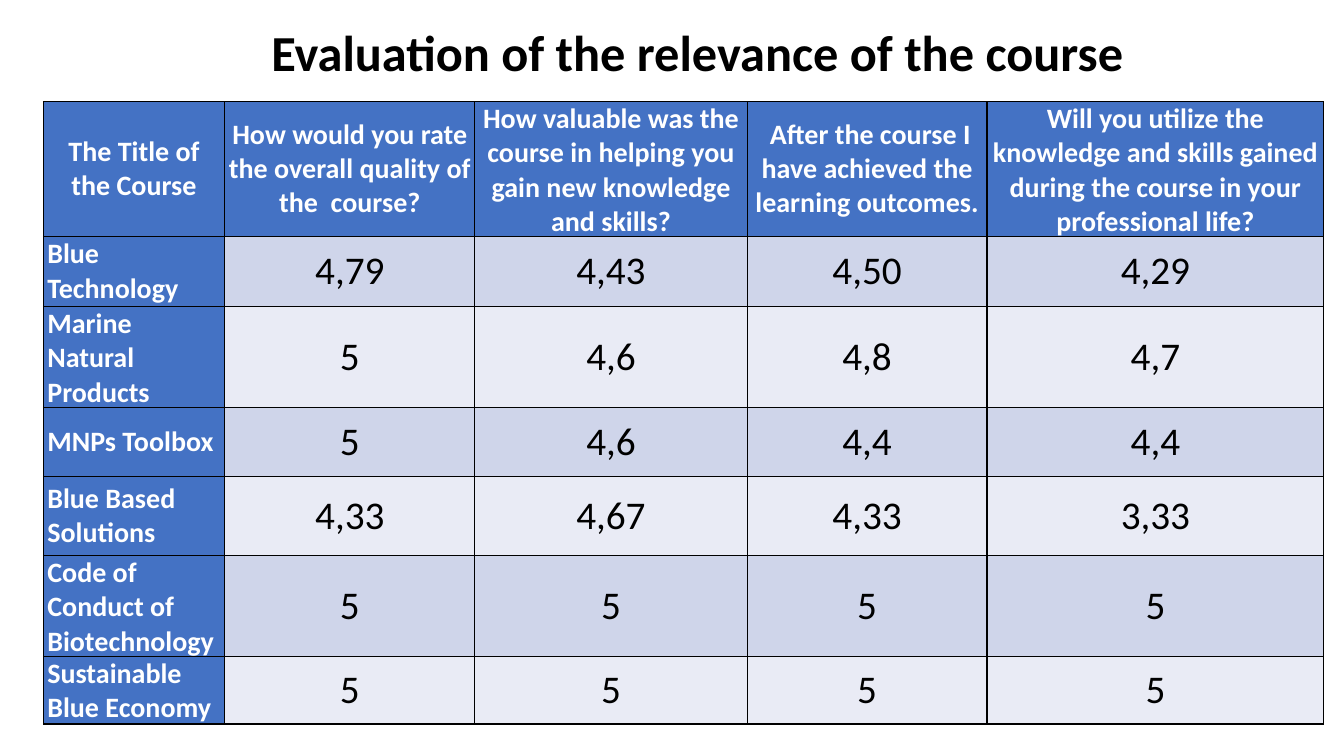
import pptx
import pptx.dml.color
import pptx.enum.text
import pptx.oxml
import pptx.oxml.ns
import pptx.util

Inches = pptx.util.Inches
Pt = pptx.util.Pt
RGBColor = pptx.dml.color.RGBColor
PP_ALIGN = pptx.enum.text.PP_ALIGN
MSO_ANCHOR = pptx.enum.text.MSO_ANCHOR

BLACK = RGBColor(0x00, 0x00, 0x00)
WHITE = RGBColor(0xFF, 0xFF, 0xFF)
BLUE = RGBColor(0x44, 0x72, 0xC4)
DARK_BAND = RGBColor(0xCF, 0xD5, 0xEA)
LIGHT_BAND = RGBColor(0xE9, 0xEB, 0xF5)

COLUMN_WIDTHS = [1.8, 2.48, 2.7, 2.38, 3.34]
ROW_HEIGHTS = [0.89, 0.7, 0.69, 0.68, 0.79, 0.91, 0.65]
RATINGS = [
    ["The Title of the Course",
     "How would you rate the overall quality of the  course?",
     "How valuable was the course in helping you gain new knowledge and skills?",
     " After the course I have achieved the learning outcomes.",
     "Will you utilize the knowledge and skills gained during the course in your professional life?"],
    ["Blue Technology", "4,79", "4,43", "4,50", "4,29"],
    ["Marine Natural Products", "5", "4,6", "4,8", "4,7"],
    ["MNPs Toolbox", "5", "4,6", "4,4", "4,4"],
    ["Blue Based Solutions", "4,33", "4,67", "4,33", "3,33"],
    ["Code of Conduct of Biotechnology", "5", "5", "5", "5"],
    ["Sustainable Blue Economy", "5", "5", "5", "5"],
]


def style_text(para, size, color, bold, alignment):
    para.alignment = alignment
    para.font.name = "Calibri"
    para.font.size = Pt(size)
    para.font.bold = bold
    para.font.color.rgb = color


def add_borders(cell):
    """Draw a thin black line on all four sides of a cell."""
    properties = cell._tc.get_or_add_tcPr()
    for position, side in enumerate(("lnL", "lnR", "lnT", "lnB")):
        line = pptx.oxml.parse_xml(
            f'<a:{side} {pptx.oxml.ns.nsdecls("a")} w="{Pt(1)}">'
            f'<a:solidFill><a:srgbClr val="{BLACK}"/></a:solidFill></a:{side}>')
        properties.insert(position, line)


deck = pptx.Presentation()
deck.slide_width = Inches(13.33)
deck.slide_height = Inches(7.5)
page = deck.slides.add_slide(deck.slide_layouts[6])

title_box = page.shapes.add_textbox(Inches(1.35), Inches(0.24), Inches(11.14), Inches(0.61))
title_box.text_frame.word_wrap = True
title_box.text_frame.vertical_anchor = MSO_ANCHOR.MIDDLE
title = title_box.text_frame.paragraphs[0]
title.text = "Evaluation of the relevance of the course"
title.line_spacing = 0.9
style_text(title, 36, BLACK, True, PP_ALIGN.CENTER)

table_frame = page.shapes.add_table(
    len(ROW_HEIGHTS), len(COLUMN_WIDTHS),
    Inches(0.43), Inches(1.01), Inches(12.71), Inches(6.17))
table = table_frame.table
table.first_col = True
for column, width in zip(table.columns, COLUMN_WIDTHS):
    column.width = Inches(width)
for row, height in zip(table.rows, ROW_HEIGHTS):
    row.height = Inches(height)
table_frame.height = Inches(6.17)

for row_index, texts in enumerate(RATINGS):
    for column_index, text in enumerate(texts):
        cell = table.cell(row_index, column_index)
        cell.text = text
        cell.vertical_anchor = MSO_ANCHOR.MIDDLE
        cell.margin_left = cell.margin_right = Inches(0.04)
        cell.margin_top = cell.margin_bottom = 0
        cell.fill.solid()
        para = cell.text_frame.paragraphs[0]
        if row_index == 0 or column_index == 0:
            cell.fill.fore_color.rgb = BLUE
            alignment = PP_ALIGN.CENTER if row_index == 0 else PP_ALIGN.LEFT
            style_text(para, 20, WHITE, True, alignment)
        else:
            cell.fill.fore_color.rgb = DARK_BAND if row_index % 2 else LIGHT_BAND
            style_text(para, 28, BLACK, False, PP_ALIGN.CENTER)
        add_borders(cell)

deck.save("out.pptx")
